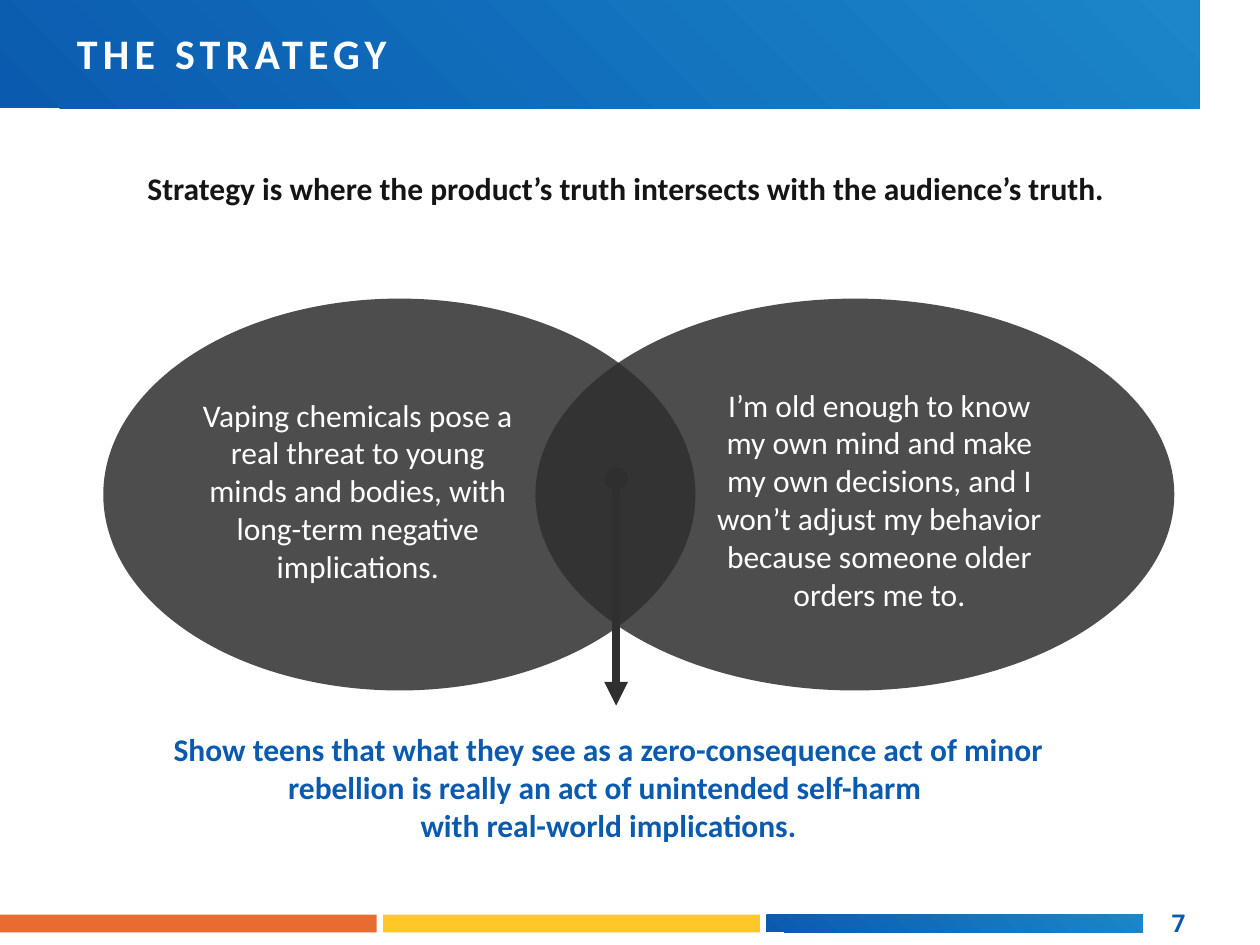
from lxml import etree
from pptx import Presentation
from pptx.dml.color import RGBColor
from pptx.enum.shapes import MSO_CONNECTOR, MSO_SHAPE
from pptx.enum.text import MSO_ANCHOR, PP_ALIGN
from pptx.oxml.ns import qn
from pptx.util import Inches, Pt

RECTANGLE, OVAL = MSO_SHAPE.RECTANGLE, MSO_SHAPE.OVAL
LEFT, CENTER, RIGHT = PP_ALIGN.LEFT, PP_ALIGN.CENTER, PP_ALIGN.RIGHT
TOP, MIDDLE = MSO_ANCHOR.TOP, MSO_ANCHOR.MIDDLE
BLUE, SKY, GOLD, ORANGE = "0A5BAF", "1B86CA", "FFC728", "E86C31"
CHARCOAL, INK, WHITE = "2F2F2F", "161515", "FFFFFF"

deck = Presentation()
deck.slide_width, deck.slide_height = Inches(10), Inches(7.5)
page = deck.slides.add_slide(deck.slide_layouts[6])

# All places are percentages of the slide's width and height
COLUMN, ROW = deck.slide_width / 100, deck.slide_height / 100


def add_block(kind, place, colors, opacity=100):
    """Add a borderless shape; two colours run from bottom left to top right."""
    left, top, width, height = place
    block = page.shapes.add_shape(kind, int(left * COLUMN), int(top * ROW),
                                  int(width * COLUMN), int(height * ROW))
    block.shadow.inherit = False
    block.line.fill.background()
    if len(colors) == 2:
        block.fill.gradient()
        block.fill.gradient_angle = 45
        for stop, color, position in zip(block.fill.gradient_stops, colors, (0, 1)):
            stop.color.rgb = RGBColor.from_string(color)
            stop.position = position
    else:
        block.fill.solid()
        block.fill.fore_color.rgb = RGBColor.from_string(colors[0])
    if opacity < 100:
        tint = block.fill._xPr.find(".//" + qn("a:srgbClr"))
        etree.SubElement(tint, qn("a:alpha"), val=str(opacity * 1000))


def add_text(place, lines, color, insets, align=CENTER, anchor=MIDDLE, wrap=True,
             spacing=0, **font):
    left, top, width, height = place
    box = page.shapes.add_textbox(int(left * COLUMN), int(top * ROW),
                                  int(width * COLUMN), int(height * ROW))
    frame = box.text_frame
    frame.word_wrap, frame.vertical_anchor = wrap, anchor
    for side, inset in zip(("left", "top", "right", "bottom"), insets):
        setattr(frame, "margin_" + side, Inches(inset))
    look = {"name": "Calibri", "size": Pt(18), "bold": False} | font
    for number, line in enumerate(lines):
        para = frame.add_paragraph() if number else frame.paragraphs[0]
        para.alignment = align
        span = para.add_run()
        span.text = line
        for name, value in look.items():
            setattr(span.font, name, value)
        span.font.color.rgb = RGBColor.from_string(color)
        if spacing:
            span.font._element.set("spc", str(spacing * 100))


BODY_INSETS = (0.12, 0.12, 0.24, 0.12)

# Title band
add_block(RECTANGLE, (0, 0, 95.2, 11.47), (BLUE, SKY))
add_text((5.4, 2, 26.9, 7.2), ["THE STRATEGY"], WHITE, [0.07] * 4, align=LEFT,
         wrap=False, spacing=3, size=Pt(24), bold=True)

# Opening statement
add_text((4.8, 17.87, 89.8, 4),
         ["Strategy is where the product’s truth intersects with the audience’s truth."],
         INK, [0] * 4, anchor=TOP, bold=True)

# Overlapping truths
for left, width in ((8.2, 47), (42.5, 50.7)):
    add_block(OVAL, (left, 31.6, width, 41.47), [CHARCOAL], opacity=85)
add_text((13.8, 39.87, 30.4, 24),
         ["Vaping chemicals pose a real threat to young minds and bodies, "
          "with long-term negative implications."], WHITE, BODY_INSETS)
add_text((55.3, 39.87, 30.2, 25.87),
         ["I’m old enough to know my own mind and make my own decisions, and I "
          "won’t adjust my behavior because someone older orders me to."],
         WHITE, BODY_INSETS)

# Arrow from the overlap to the conclusion
arrow = page.shapes.add_connector(MSO_CONNECTOR.STRAIGHT, int(48.9 * COLUMN),
                                  int(50.67 * ROW), int(48.9 * COLUMN), int(74.67 * ROW))
arrow.line.width = Pt(4.5)
arrow.line.color.rgb = RGBColor.from_string(CHARCOAL)
for tag, ending in (("a:headEnd", "oval"), ("a:tailEnd", "triangle")):
    etree.SubElement(arrow.line._ln, qn(tag), type=ending)
etree.SubElement(arrow._element.spPr, qn("a:effectLst"))

# Conclusion
add_text((9.7, 76.53, 78.4, 13.47),
         ["Show teens that what they see as a zero-consequence act of minor "
          "rebellion is really an act of unintended self-harm ",
          "with real-world implications."], BLUE, BODY_INSETS, bold=True)

# Footer bars and page number
for index, colors in enumerate(([ORANGE], [GOLD], (BLUE, SKY))):
    add_block(RECTANGLE, (index * 30.4, 96.8, 29.9, 1.87), colors)
add_text((91.9, 95.33, 2.8, 4.67), ["7"], BLUE, [0.06] * 4, align=RIGHT,
         name="Roboto", size=Pt(14), bold=True)

deck.save("out.pptx")
